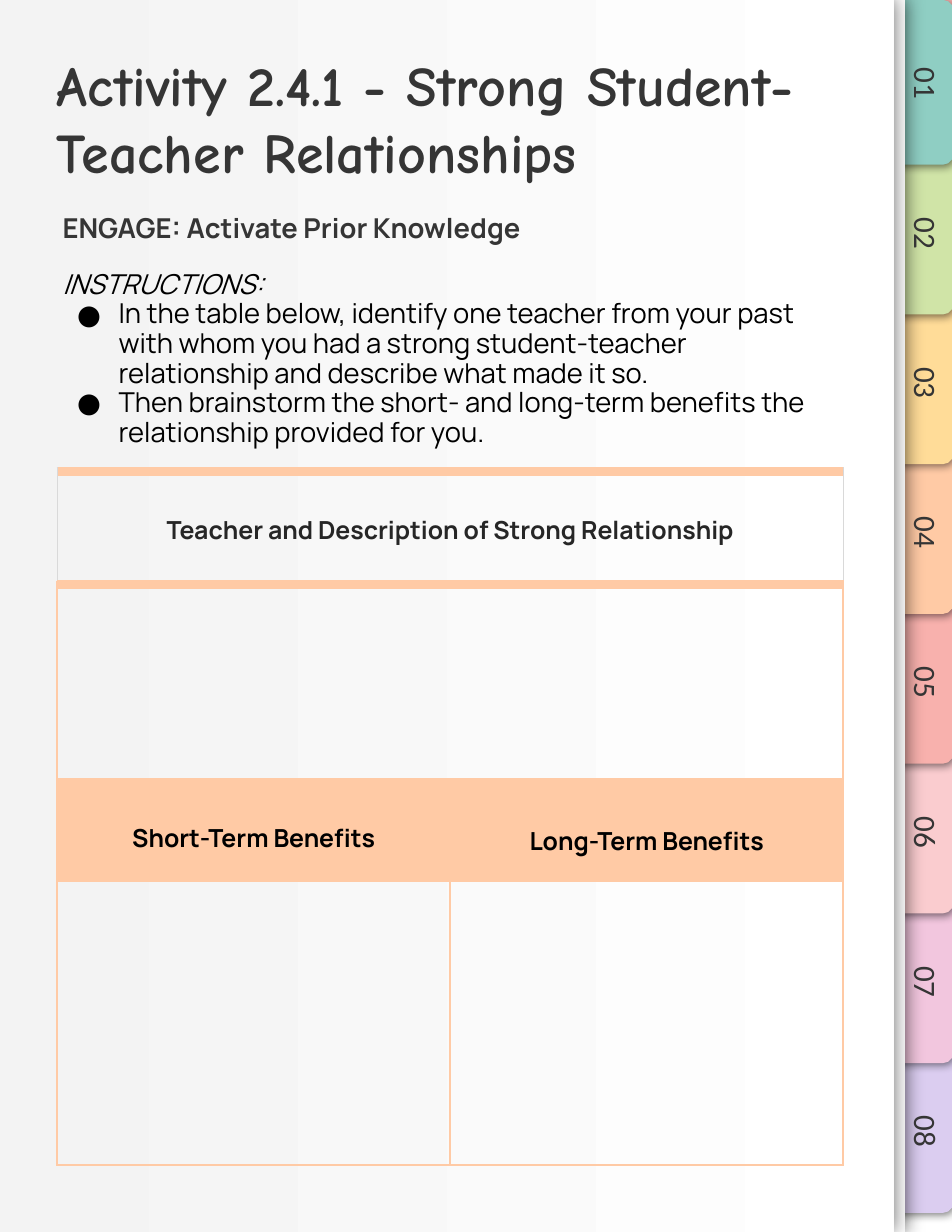
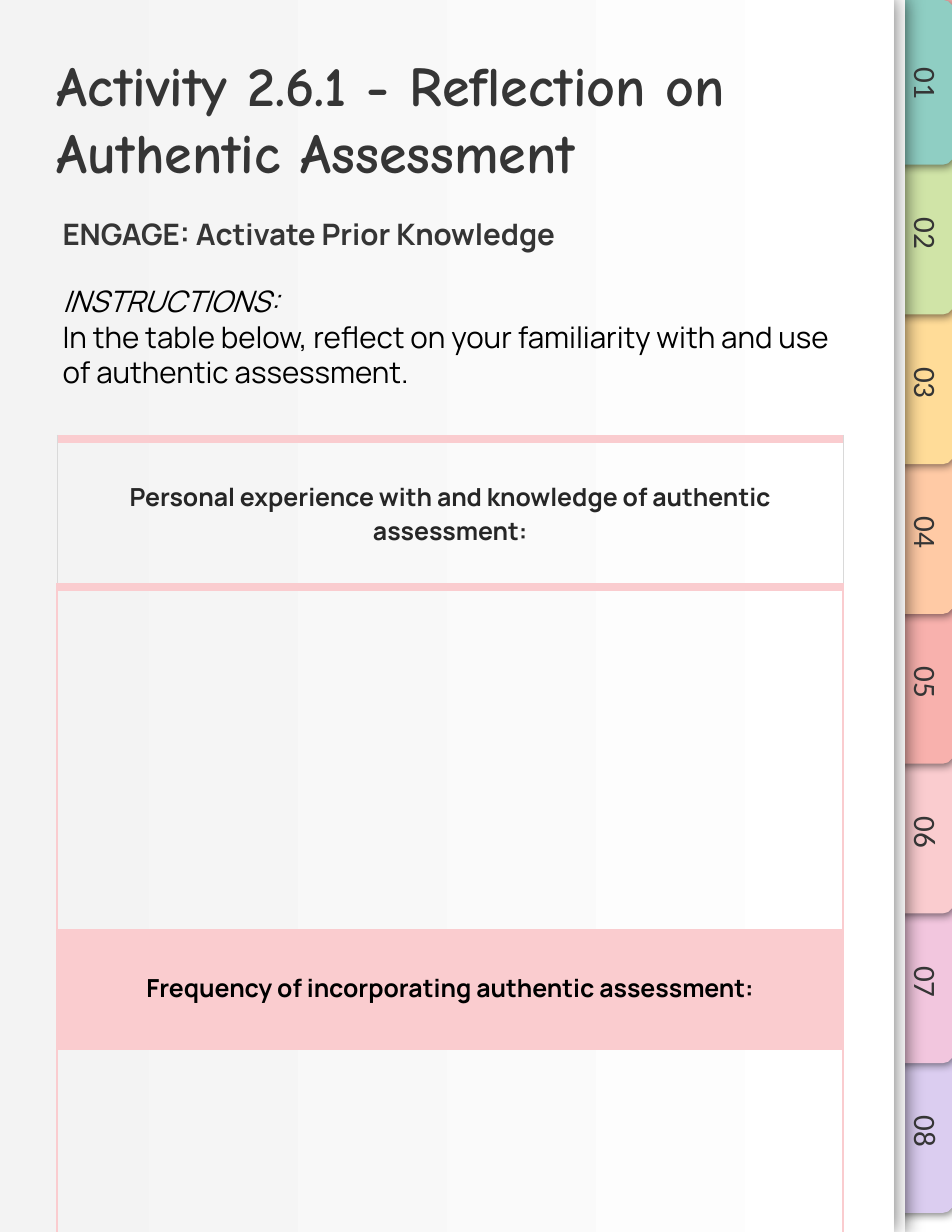
from lxml import etree
from pptx import Presentation
from pptx.dml.color import RGBColor
from pptx.enum.shapes import MSO_SHAPE as SHAPE
from pptx.enum.text import MSO_ANCHOR as ANCHOR, PP_ALIGN as ALIGN
from pptx.oxml.ns import qn
from pptx.util import Inches, Pt

BACK, INK, BLACK, WHITE = "F8B1AD", "353535", "000000", "FFFFFF"
HEADER_INK, HAIRLINE = "262626", "D9D9D9"
TAB_COLORS = ["8FCEC3", "D0E4A7", "FFDC98", "FFCAA5",
              "F8B1AD", "FACCCF", "F2C6DE", "DBCDF0"]
ORANGE, PINK = TAB_COLORS[3], TAB_COLORS[5]
TITLE_FONT, BODY_FONT, TAB_FONT = "Comic Neue", "Manrope", "Calibri"

TAB_BOX = (7.51, 0.47, 1.47, 0.53)
LABEL_BOX = (7.6, 0.43, 1.44, 0.63)
TAB_PITCH = 1.337
TITLE_BOX = (0.41, 0.35, 7.12, 0.63)
BODY_BOX = (0.46, 1.7, 7.12, 2.51)


def rgb(color):
    return RGBColor.from_string(color)


def inches(box):
    return [Inches(v) for v in box]


def add_xml(parent, tag, **attrs):
    return etree.SubElement(parent, qn(tag), {k: str(v) for k, v in attrs.items()})


def add_box(s, shape, box, fill=None):
    sp = s.shapes.add_shape(shape, *inches(box))
    sp.shadow.inherit = False
    sp.line.fill.background()
    if fill:
        sp.fill.solid()
        sp.fill.fore_color.rgb = rgb(fill)
    return sp


def add_shadow(sp, blur, dist, angle):
    effects = sp._element.spPr.find(qn("a:effectLst"))
    shadow = add_xml(effects, "a:outerShdw", blurRad=Pt(blur), dist=Pt(dist),
                     dir=angle * 60000, algn="bl", rotWithShape=0)
    color = add_xml(shadow, "a:srgbClr", val=BLACK)
    add_xml(color, "a:alpha", val=50000)


def add_run(p, text, size, font, color, bold=False, italic=False):
    r = p.add_run()
    r.text = text
    f = r.font
    f.size, f.name, f.bold, f.italic = Pt(size), font, bold, italic
    f.color.rgb = rgb(color)


def add_text_box(s, box, anchor=ANCHOR.TOP):
    sp = s.shapes.add_textbox(*inches(box))
    tf = sp.text_frame
    tf.word_wrap = True
    tf.vertical_anchor = anchor
    tf.margin_left = tf.margin_right = tf.margin_top = tf.margin_bottom = Inches(0.1)
    return sp


def add_bullet(p):
    pPr = p._p.get_or_add_pPr()
    pPr.set("marL", str(Inches(0.5)))
    pPr.set("indent", str(Inches(-0.37)))
    add_xml(add_xml(pPr, "a:buClr"), "a:srgbClr", val=BLACK)
    add_xml(pPr, "a:buFont", typeface=BODY_FONT)
    add_xml(pPr, "a:buChar", char="●")


def add_notebook(s):
    """Page with numbered index tabs down its right edge."""
    s.background.fill.solid()
    s.background.fill.fore_color.rgb = rgb(BACK)
    add_box(s, SHAPE.RECTANGLE, (8.08, 8.58, 0.42, 2.42), WHITE)

    # Tabs, lowest first so that each one overlaps the next
    left, top, width, height = TAB_BOX
    for i, color in reversed(list(enumerate(TAB_COLORS))):
        tab = add_box(s, SHAPE.ROUND_2_SAME_RECTANGLE,
                      (left, top + i * TAB_PITCH, width, height), color)
        tab.adjustments[0], tab.adjustments[1] = 0.167, 0
        tab.rotation = 90
        add_shadow(tab, 5.6, 1.5, 61)

    # Two sheets of paper
    for x in (0.1, 0):
        sheet = add_box(s, SHAPE.RECTANGLE, (x, 0, 7.98, 11), WHITE)
        add_shadow(sheet, 12.4, 0.8, 0)
    sheet.fill.gradient()
    sheet.fill.gradient_angle = 0
    for stop, color in zip(sheet.fill.gradient_stops, ("F3F3F3", WHITE)):
        stop.color.rgb = rgb(color)

    # Tab numbers
    left, top, width, height = LABEL_BOX
    for i in range(len(TAB_COLORS)):
        label = add_text_box(s, (left, top + i * TAB_PITCH, width, height), ANCHOR.BOTTOM)
        label.rotation = 90
        p = label.text_frame.paragraphs[0]
        p.alignment = ALIGN.CENTER
        add_run(p, f"{i + 1:02}", 20, TAB_FONT, INK)


def add_title(s, box, text):
    p = add_text_box(s, box).text_frame.paragraphs[0]
    add_run(p, text, 36, TITLE_FONT, INK, bold=True)


def add_instructions(s, box, lines, size, head_spacing, spacing, gap, bullets):
    tf = add_text_box(s, box).text_frame
    p = tf.paragraphs[0]
    p.line_spacing = head_spacing
    add_run(p, "ENGAGE: Activate Prior Knowledge", size, BODY_FONT, INK, bold=True)

    p = tf.add_paragraph()
    p.line_spacing = spacing
    p.space_before = Pt(gap)
    add_run(p, "INSTRUCTIONS:", size, BODY_FONT, BLACK, italic=True)

    for line in lines:
        p = tf.add_paragraph()
        p.line_spacing = spacing
        if bullets:
            add_bullet(p)
        add_run(p, line, size, BODY_FONT, BLACK)


def set_borders(cell, **sides):
    tcPr = cell._tc.get_or_add_tcPr()
    for side in "LRTB":
        if side in sides:
            color, width = sides[side]
            ln = add_xml(tcPr, f"a:ln{side}", w=Pt(width))
            add_xml(add_xml(ln, "a:solidFill"), "a:srgbClr", val=color)


def fill_heading(cell, text, color, inset=0.07):
    cell.margin_left = cell.margin_right = cell.margin_bottom = Inches(inset)
    cell.margin_top = Inches(inset + 0.3)  # leaves one line free above
    p = cell.text_frame.paragraphs[0]
    p.alignment = ALIGN.CENTER
    add_run(p, text, 16, BODY_FONT, color, bold=True)


def add_answer_table(s, left, top, row_heights, color, header, subheads):
    """Header, answer row, coloured subheads, answer row."""
    width = 7.02
    table = s.shapes.add_table(4, 2, *inches((left, top, width, sum(row_heights)))).table
    table.first_row = table.horz_banding = False
    for row, height in zip(table.rows, row_heights):
        row.height = Inches(height)
    for col in table.columns:
        col.width = Inches(width / 2)

    # Borders and fills
    thin, thick, hair = (color, 1.5), (color, 6), (HAIRLINE, 0.5)
    single = len(subheads) == 1
    merged = (0, 1, 2, 3) if single else (0, 1)
    for i in range(4):
        side = hair if i == 0 else thin
        for j in range(2):
            cell = table.cell(i, j)
            borders = dict(L=side, R=side, T=thick if i < 2 else thin,
                           B=thick if i == 0 else thin)
            if j == 1 and i in merged:
                del borders["L"]
            set_borders(cell, **borders)
            if i == 2:
                cell.fill.solid()
                cell.fill.fore_color.rgb = rgb(color)
            else:
                cell.fill.background()
    for i in merged:
        table.cell(i, 0).merge(table.cell(i, 1))

    # Headings
    fill_heading(table.cell(0, 0), header, HEADER_INK)
    for j, (text, inset) in enumerate(zip(subheads, (0.07, 0.1))):
        fill_heading(table.cell(2, j), text, BLACK, inset)


def add_activity(prs, title, instructions, table):
    s = prs.slides.add_slide(prs.slide_layouts[6])
    add_notebook(s)
    add_title(s, TITLE_BOX, title)
    add_instructions(s, BODY_BOX, **instructions)
    add_answer_table(s, 0.51, **table)


def main():
    prs = Presentation()
    prs.slide_width, prs.slide_height = Inches(8.5), Inches(11)

    add_activity(
        prs, "Activity 2.4.1 - Strong Student-Teacher Relationships",
        dict(lines=["In the table below, identify one teacher from your past with whom "
                    "you had a strong student-teacher relationship and describe what "
                    "made it so.",
                    "Then brainstorm the short- and long-term benefits the relationship "
                    "provided for you."],
             size=17.6, head_spacing=1.3, spacing=0.9, gap=17, bullets=True),
        dict(top=4.21, row_heights=[1.01, 1.74, 0.91, 2.53], color=ORANGE,
             header="Teacher and Description of Strong Relationship",
             subheads=["Short-Term Benefits", "Long-Term Benefits"]))

    add_activity(
        prs, "Activity 2.6.1 - Reflection on Authentic Assessment",
        dict(lines=["In the table below, reflect on your familiarity with and use of "
                    "authentic assessment."],
             size=19, head_spacing=1.4, spacing=1.0, gap=20.5, bullets=False),
        dict(top=3.92, row_heights=[1.32, 3.06, 1.07, 2.02], color=PINK,
             header="Personal experience with and knowledge of authentic assessment:",
             subheads=["Frequency of incorporating authentic assessment:"]))

    prs.save("out.pptx")


if __name__ == "__main__":
    main()
